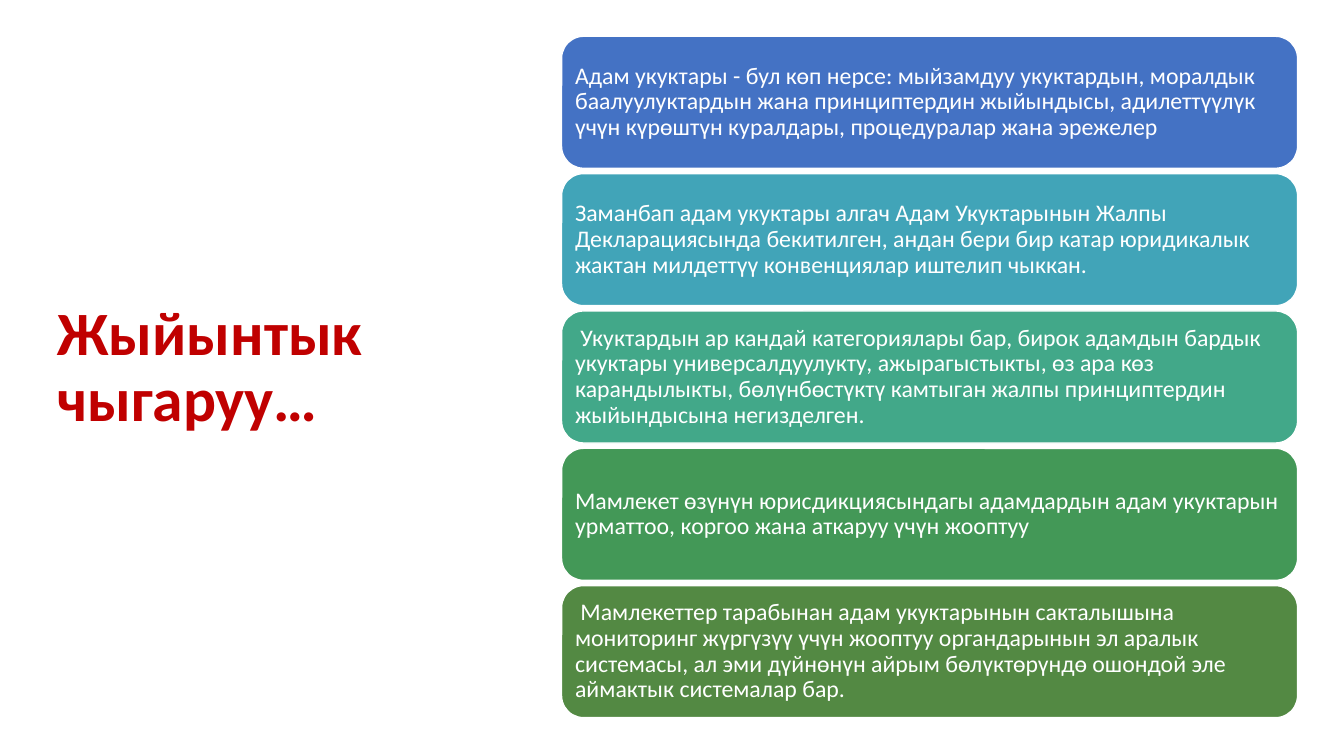
from dataclasses import dataclass

from pptx import Presentation
from pptx.dml.color import RGBColor
from pptx.enum.shapes import MSO_SHAPE
from pptx.enum.text import MSO_ANCHOR, PP_ALIGN
from pptx.util import Inches, Pt


@dataclass(frozen=True)
class Theme:
    font: str = "Calibri"
    title_color: str = "C00000"
    light: str = "FFFFFF"
    title_size: int = 44
    body_size: int = 17
    line_spacing: float = 0.9


THEME = Theme()

# Each conclusion: card colour and wording
CONCLUSIONS = [
    ("4472C4", "Адам укуктары - бул көп нерсе: мыйзамдуу укуктардын, моралдык "
               "баалуулуктардын жана принциптердин жыйындысы, адилеттүүлүк үчүн "
               "күрөштүн куралдары, процедуралар жана эрежелер"),
    ("41A4B8", "Заманбап адам укуктары алгач Адам Укуктарынын Жалпы "
               "Декларациясында бекитилген, андан бери бир катар юридикалык "
               "жактан милдеттүү конвенциялар иштелип чыккан."),
    ("42A889", " Укуктардын ар кандай категориялары бар, бирок адамдын бардык "
               "укуктары универсалдуулукту, ажырагыстыкты, өз ара көз "
               "карандылыкты, бөлүнбөстүктү камтыган жалпы принциптердин "
               "жыйындысына негизделген."),
    ("439857", "Мамлекет өзүнүн юрисдикциясындагы адамдардын адам укуктарын "
               "урматтоо, коргоо жана аткаруу үчүн жооптуу"),
    ("538943", " Мамлекеттер тарабынан адам укуктарынын сакталышына мониторинг "
               "жүргүзүү үчүн жооптуу органдарынын эл аралык системасы, ал эми "
               "дүйнөнүн айрым бөлүктөрүндө ошондой эле аймактык системалар бар."),
]

# Card column, in inches
CARD_LEFT, CARD_TOP = 5.57, 0.36
CARD_WIDTH, CARD_HEIGHT = 7.3, 1.31
CARD_STEP = 1.3625
CARD_INSET = 0.07


def write(frame, text, size, color, bold=False):
    frame.word_wrap = True
    frame.vertical_anchor = MSO_ANCHOR.MIDDLE
    paragraph = frame.paragraphs[0]
    paragraph.alignment = PP_ALIGN.LEFT
    paragraph.line_spacing = THEME.line_spacing
    run = paragraph.add_run()
    run.text = text
    run.font.name = THEME.font
    run.font.size = Pt(size)
    run.font.bold = bold
    run.font.color.rgb = RGBColor.from_string(color)


def add_title(slide, text):
    title = slide.shapes.add_textbox(
        Inches(0.47), Inches(0.61), Inches(4.49), Inches(6.09))
    write(title.text_frame, text, THEME.title_size, THEME.title_color, bold=True)


def add_card(slide, top, color, text):
    card = slide.shapes.add_shape(
        MSO_SHAPE.ROUNDED_RECTANGLE, Inches(CARD_LEFT), Inches(top),
        Inches(CARD_WIDTH), Inches(CARD_HEIGHT))
    card.shadow.inherit = False
    card.fill.solid()
    card.fill.fore_color.rgb = RGBColor.from_string(color)
    card.line.color.rgb = RGBColor.from_string(THEME.light)
    card.line.width = Pt(1)
    frame = card.text_frame
    frame.margin_left = frame.margin_right = Inches(CARD_INSET)
    frame.margin_top = frame.margin_bottom = Inches(CARD_INSET)
    write(frame, text, THEME.body_size, THEME.light)


def main():
    deck = Presentation()
    deck.slide_width, deck.slide_height = Inches(13.33), Inches(7.5)
    slide = deck.slides.add_slide(deck.slide_layouts[6])

    # Heading on the left
    add_title(slide, "Жыйынтык чыгаруу…")

    # Column of conclusions on the right
    for row, (color, text) in enumerate(CONCLUSIONS):
        add_card(slide, CARD_TOP + row * CARD_STEP, color, text)

    deck.save("out.pptx")


if __name__ == "__main__":
    main()
